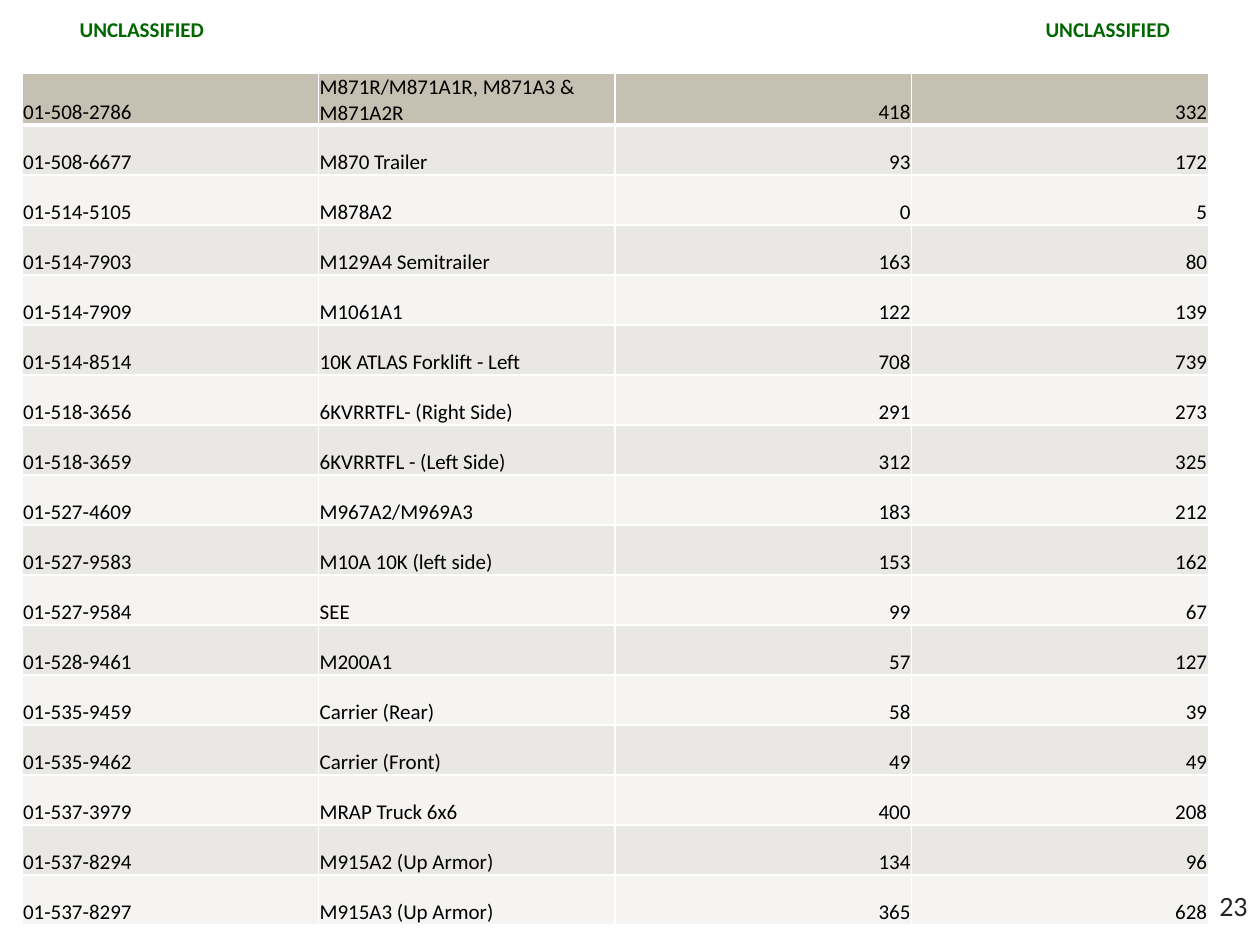
from dataclasses import dataclass

import pptx
import pptx.dml.color
import pptx.enum.text
import pptx.oxml
import pptx.oxml.ns
import pptx.util

Pt = pptx.util.Pt
ALIGN = pptx.enum.text.PP_ALIGN
ANCHOR = pptx.enum.text.MSO_ANCHOR


@dataclass(frozen=True)
class Theme:
    font: str = "Calibri"
    body_size: float = 12
    number_size: float = 16
    text: str = "000000"
    marking: str = "006600"
    number: str = "262626"
    border: str = "FFFFFF"
    first_row: str = "C5C0B1"
    odd_row: str = "EAE8E4"
    even_row: str = "F5F4F2"
    thin: float = 1
    thick: float = 3


THEME = Theme()

STOCK = [
    ("01-508-2786", "M871R/M871A1R, M871A3 & M871A2R", 418, 332),
    ("01-508-6677", "M870 Trailer", 93, 172),
    ("01-514-5105", "M878A2", 0, 5),
    ("01-514-7903", "M129A4 Semitrailer", 163, 80),
    ("01-514-7909", "M1061A1", 122, 139),
    ("01-514-8514", "10K ATLAS Forklift - Left", 708, 739),
    ("01-518-3656", "6KVRRTFL- (Right Side)", 291, 273),
    ("01-518-3659", "6KVRRTFL - (Left Side)", 312, 325),
    ("01-527-4609", "M967A2/M969A3", 183, 212),
    ("01-527-9583", "M10A 10K (left side)", 153, 162),
    ("01-527-9584", "SEE", 99, 67),
    ("01-528-9461", "M200A1", 57, 127),
    ("01-535-9459", "Carrier (Rear)", 58, 39),
    ("01-535-9462", "Carrier (Front)", 49, 49),
    ("01-537-3979", "MRAP Truck 6x6", 400, 208),
    ("01-537-8294", "M915A2 (Up Armor)", 134, 96),
    ("01-537-8297", "M915A3 (Up Armor)", 365, 628),
]


def write(frame, text, size=THEME.body_size, color=THEME.text, bold=False, align=ALIGN.LEFT):
    paragraph = frame.paragraphs[0]
    paragraph.alignment = align
    run = paragraph.add_run()
    run.text = text
    run.font.name = THEME.font
    run.font.size = Pt(size)
    run.font.bold = bold
    run.font.color.rgb = pptx.dml.color.RGBColor.from_string(color)


def add_label(slide, box, text, anchor=ANCHOR.TOP, **text_format):
    frame = slide.shapes.add_textbox(*map(Pt, box)).text_frame
    frame.word_wrap = True
    frame.vertical_anchor = anchor
    write(frame, text, **text_format)


def add_markings(slide, box):
    """Put the classification at both ends of the band."""
    left, top, width, height = box
    label_width = 126
    for label_left in (left, left + width - label_width):
        add_label(slide, (label_left, top, label_width, height), "UNCLASSIFIED",
                  anchor=ANCHOR.MIDDLE, color=THEME.marking, bold=True, align=ALIGN.CENTER)


def set_borders(cell, **widths):
    """Draw the sides given as l, r, t and b, each with its width in points."""
    properties = cell._tc.get_or_add_tcPr()
    for position, side in enumerate("lrtb"):
        properties.insert(position, pptx.oxml.parse_xml(
            f'<a:ln{side.upper()} {pptx.oxml.ns.nsdecls("a")} w="{Pt(widths[side])}">'
            f'<a:solidFill><a:srgbClr val="{THEME.border}"/></a:solidFill>'
            f'</a:ln{side.upper()}>'))


def row_fill(row):
    if row == 0:
        return THEME.first_row
    return THEME.odd_row if row % 2 else THEME.even_row


def add_stock_table(slide, box):
    left, top, width, height = box
    table = slide.shapes.add_table(len(STOCK), len(STOCK[0]), *map(Pt, box)).table
    for column in table.columns:
        column.width = Pt(width / len(STOCK[0]))
    for row, record in enumerate(STOCK):
        table.rows[row].height = Pt(height / len(STOCK))
        for column, value in enumerate(record):
            cell = table.cell(row, column)
            cell.margin_left = cell.margin_right = cell.margin_top = Pt(0.7)
            cell.margin_bottom = 0
            cell.vertical_anchor = ANCHOR.BOTTOM
            cell.fill.solid()
            cell.fill.fore_color.rgb = pptx.dml.color.RGBColor.from_string(row_fill(row))
            set_borders(cell, l=THEME.thin, r=THEME.thin,
                        t=THEME.thick if row == 1 else THEME.thin,
                        b=THEME.thick if row == 0 else THEME.thin)
            write(cell.text_frame, str(value),
                  align=ALIGN.RIGHT if isinstance(value, int) else ALIGN.LEFT)


def add_page_number(slide, box):
    add_label(slide, box, "23", size=THEME.number_size, color=THEME.number, align=ALIGN.RIGHT)


def main():
    deck = pptx.Presentation()
    deck.slide_width, deck.slide_height = Pt(720), Pt(540)
    slide = deck.slides.add_slide(deck.slide_layouts[6])
    add_markings(slide, (18, 6, 678, 21.6))
    add_stock_table(slide, (12.5, 42, 678, 486))
    add_page_number(slide, (552, 504, 168, 36))
    deck.save("out.pptx")


if __name__ == "__main__":
    main()
